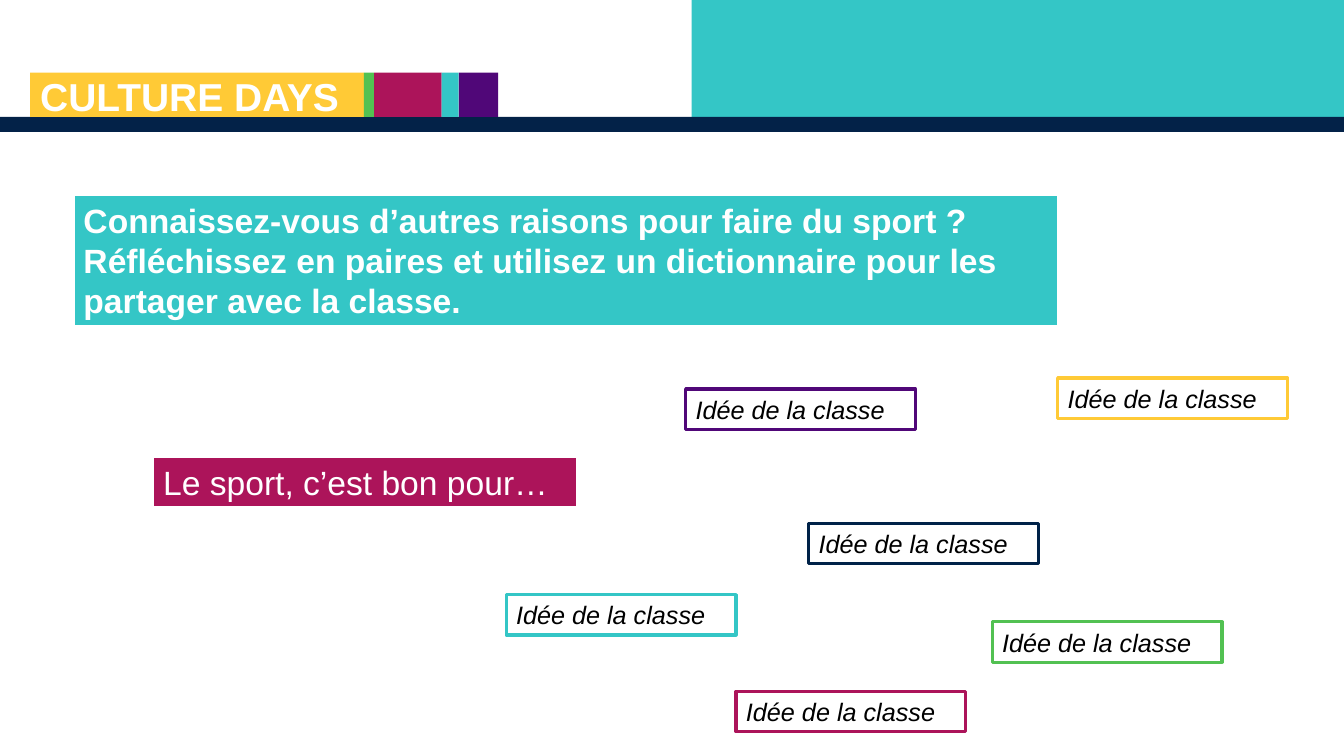
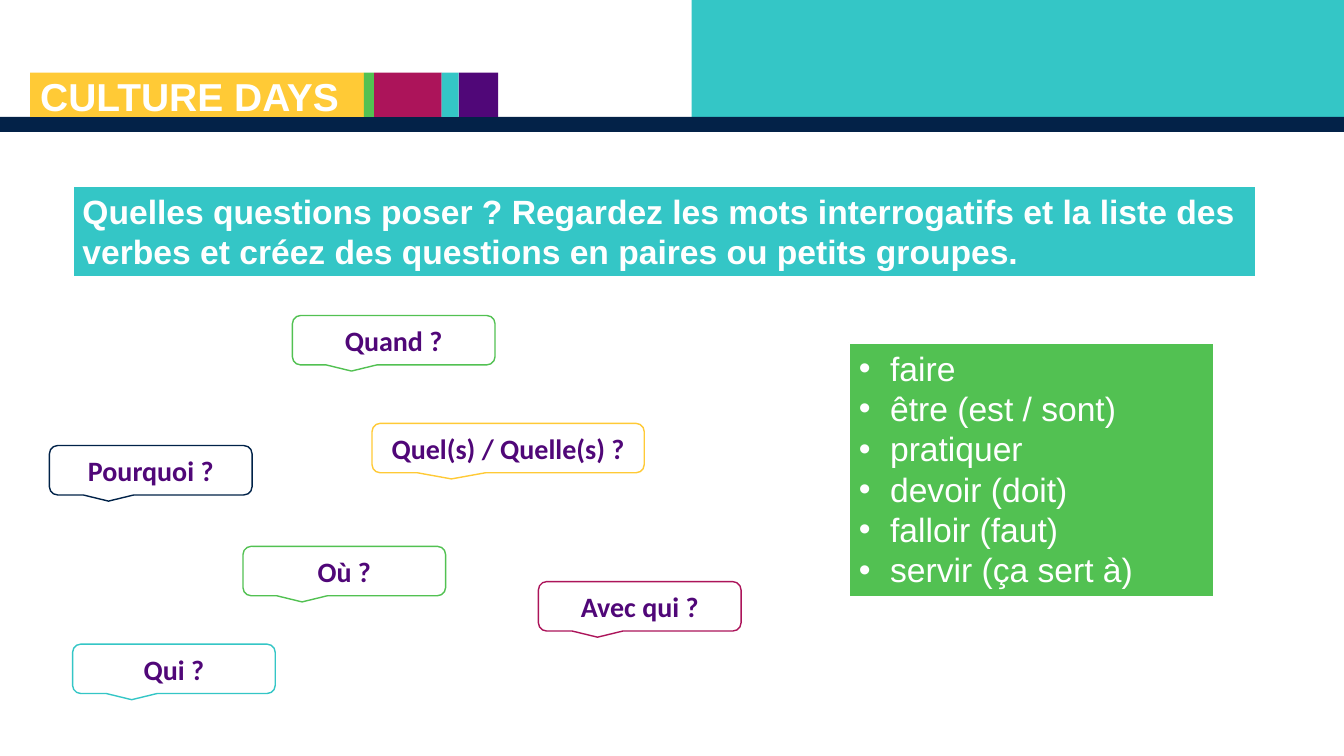
from pptx import Presentation
from pptx.dml.color import RGBColor
from pptx.enum.shapes import MSO_SHAPE
from pptx.enum.text import MSO_ANCHOR, MSO_AUTO_SIZE, PP_ALIGN
from pptx.oxml.ns import qn
from pptx.util import Emu, Pt
from lxml import etree

RECTANGLE = MSO_SHAPE.RECTANGLE
CALLOUT = MSO_SHAPE.ROUNDED_RECTANGULAR_CALLOUT
TOP, MIDDLE, BOTTOM = MSO_ANCHOR.TOP, MSO_ANCHOR.MIDDLE, MSO_ANCHOR.BOTTOM
LEFT, CENTER = PP_ALIGN.LEFT, PP_ALIGN.CENTER
GROW = MSO_AUTO_SIZE.SHAPE_TO_FIT_TEXT

EMU_PER_PX = 9144  # 100 px to the inch
SLIDE_WIDTH, SLIDE_HEIGHT = 1333, 750
BULLET_INDENT = 31

TEAL, NAVY, PURPLE = "34C6C6", "002248", "500778"
CRIMSON, GREEN, YELLOW = "AC145A", "52C152", "FFCA36"
BAR_NAVY, WHITE, BLACK = "032248", "FFFFFF", "000000"


def px(length):
    return Emu(length * EMU_PER_PX)


def color(value):
    return RGBColor.from_string(value)


def add_box(slide, left, top, width, height, fill,
            line=None, line_width=1.5, kind=RECTANGLE):
    shape = slide.shapes.add_shape(kind, px(left), px(top), px(width), px(height))
    shape.shadow.inherit = False
    shape.fill.solid()
    shape.fill.fore_color.rgb = color(fill)
    if line:
        shape.line.color.rgb = color(line)
        shape.line.width = Pt(line_width)
    else:
        shape.line.fill.background()
    return shape


def add_bullet(paragraph):
    properties = paragraph._p.get_or_add_pPr()
    properties.set("marL", str(px(BULLET_INDENT)))
    properties.set("indent", str(-px(BULLET_INDENT)))
    etree.SubElement(properties, qn("a:buFont"), typeface="Arial")
    etree.SubElement(properties, qn("a:buChar"), char="•")


def write_text(shape, *texts, size=24, font="Arial", text_color=WHITE, bold=False,
               italic=False, align=LEFT, anchor=TOP, spacing=None,
               bullets=False, auto_size=None):
    """Write one paragraph for each text, all in the same format."""
    frame = shape.text_frame
    frame.word_wrap = True
    frame.vertical_anchor = anchor
    if auto_size is not None:
        frame.auto_size = auto_size
    for index, text in enumerate(texts):
        paragraph = frame.add_paragraph() if index else frame.paragraphs[0]
        paragraph.text = text
        paragraph.alignment = align
        if spacing:
            paragraph.line_spacing = spacing
        if bullets:
            add_bullet(paragraph)
        for run in paragraph.runs:
            run.font.size = Pt(size)
            run.font.name = font
            run.font.bold = bold
            run.font.italic = italic
            run.font.color.rgb = color(text_color)


def add_panel(slide, left, top, width, height, fill, *texts, **text_format):
    panel = add_box(slide, left, top, width, height, fill, WHITE)
    write_text(panel, *texts, auto_size=GROW, **text_format)


def add_idea(slide, left, top, line):
    box = add_box(slide, left, top, 228, 40, WHITE, line, 2.25)
    write_text(box, "Idée de la classe", size=18, text_color=BLACK,
               italic=True, auto_size=GROW)


def add_question_word(slide, left, top, line, word, width=201):
    bubble = add_box(slide, left, top, width, 49, WHITE, line, 1, CALLOUT)
    write_text(bubble, word, size=20, font="Calibri", text_color=PURPLE,
               bold=True, align=CENTER, anchor=MIDDLE)


def add_header(slide):
    add_box(slide, 686, 0, SLIDE_WIDTH - 686, 116, TEAL)
    add_box(slide, 0, 116, SLIDE_WIDTH, 15, BAR_NAVY)
    # Coloured strips, side by side
    left = 30
    for width, fill in ((331, YELLOW), (10, GREEN), (67, CRIMSON),
                        (17, TEAL), (39, PURPLE)):
        add_box(slide, left, 72, width, 44, fill)
        left += width
    title = slide.shapes.add_textbox(px(30), px(75), px(415), px(48))
    write_text(title, "CULTURE DAYS", size=27.8, bold=True,
               anchor=BOTTOM, spacing=0.8)


def add_slide(presentation):
    slide = presentation.slides.add_slide(presentation.slide_layouts[6])
    add_header(slide)
    return slide


def build_reasons(presentation):
    slide = add_slide(presentation)
    add_panel(slide, 73, 193, 976, 131, TEAL,
              "Connaissez-vous d’autres raisons pour faire du sport ? \n"
              "Réfléchissez en paires et utilisez un dictionnaire pour les "
              "partager avec la classe.", bold=True)
    add_panel(slide, 152, 453, 420, 50, CRIMSON, "Le sport, c’est bon pour…")
    # Ideas scattered around the prompt
    for left, top, line in ((680, 386, PURPLE), (502, 590, TEAL), (984, 617, GREEN),
                            (802, 519, NAVY), (1049, 375, YELLOW),
                            (730, 686, CRIMSON)):
        add_idea(slide, left, top, line)


def build_questions(presentation):
    slide = add_slide(presentation)
    add_panel(slide, 72, 184, 1174, 91, TEAL,
              "Quelles questions poser ? Regardez les mots interrogatifs et la "
              "liste des verbes et créez des questions en paires ou petits groupes.",
              bold=True)
    # Question words
    add_question_word(slide, 290, 313, GREEN, "Quand ?")
    add_question_word(slide, 534, 577, CRIMSON, "Avec qui ?")
    add_question_word(slide, 369, 420, YELLOW, "Quel(s) / Quelle(s) ?", width=270)
    add_question_word(slide, 72, 639, TEAL, "Qui ?")
    add_question_word(slide, 49, 442, NAVY, "Pourquoi ?")
    add_question_word(slide, 241, 542, GREEN, "Où ?")
    # Verbs
    add_panel(slide, 842, 340, 362, 252, GREEN, "faire", "être (est / sont)",
              "pratiquer", "devoir (doit)", "falloir (faut)",
              "servir (ça sert à)", bullets=True)


def main():
    presentation = Presentation()
    presentation.slide_width = px(SLIDE_WIDTH)
    presentation.slide_height = px(SLIDE_HEIGHT)
    build_reasons(presentation)
    build_questions(presentation)
    presentation.save("out.pptx")


if __name__ == "__main__":
    main()
